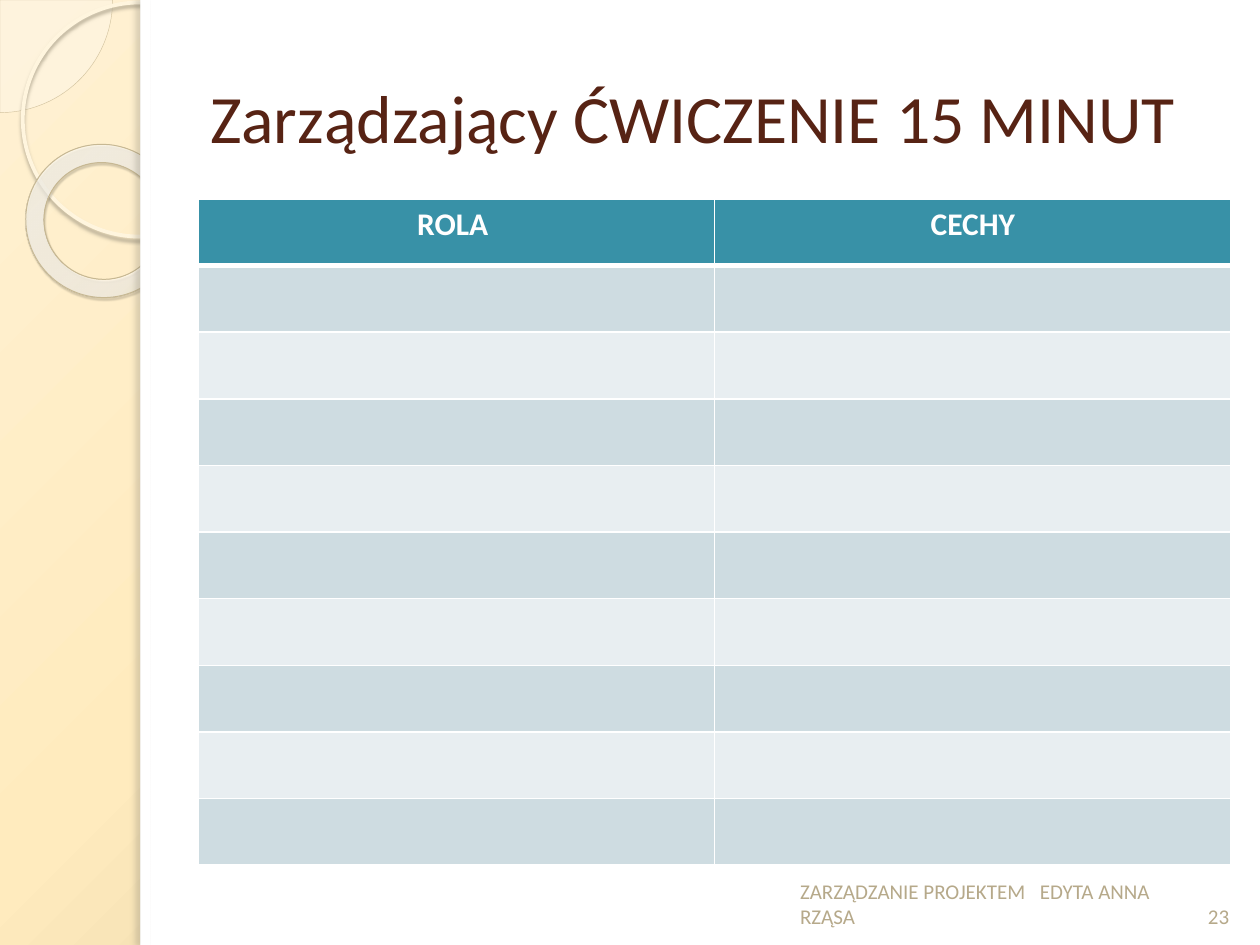
"""Build the role and trait exercise slide with its decorated side strip."""
from lxml import etree
from pptx import Presentation
from pptx.dml.color import RGBColor
from pptx.enum.shapes import MSO_SHAPE
from pptx.enum.text import MSO_ANCHOR, PP_ALIGN
from pptx.oxml.ns import qn
from pptx.util import Cm, Pt

PIE, OVAL, DONUT, RECT = MSO_SHAPE.PIE, MSO_SHAPE.OVAL, MSO_SHAPE.DONUT, MSO_SHAPE.RECTANGLE
LEFT, CENTER = PP_ALIGN.LEFT, PP_ALIGN.CENTER
TOP, MIDDLE, BOTTOM = MSO_ANCHOR.TOP, MSO_ANCHOR.MIDDLE, MSO_ANCHOR.BOTTOM

FONT = "Calibri"
WIDE, HIGH = 25.4, 19.05
COLORS = {
    "white": "FFFFFF", "title": "572314", "foot": "B6A98A",
    "head": "3891A7", "odd": "CEDCE1", "even": "E8EEF1",
    "pie": "FEFAF4", "pie_edge": "D3C39F", "ring": "FFF5DE", "donut": "C7B893",
    "ring_dim": "B0A68F", "donut_dim": "5A5444", "edge_dim": "736F63",
    "bg_in": "FFF1D3", "bg_mid": "FFEBBE", "bg_out": "C9B484",
    "in": "FFFCF6", "mid": "FFFEFB", "out": "F0D28E",
}
BACK = ([(0, "bg_in", 100), (40, "bg_mid", 100), (100, "bg_out", 100)], (-24, -20, 124, 120))
GLOW = ([(0, "in", 70), (70, "mid", 55), (100, "out", 60)], (-408, -50, 508, 150))
SHAPES = [
    dict(kind=PIE, box=(-2.27, -2.27, 4.54, 4.54), adj=(0, 54.02), fill="pie", alpha=33,
         line=("pie_edge", 0.25)),
    dict(kind=OVAL, box=(0.46, 0.05, 4.72, 4.72), line=("ring", 2.15),
         shadow=("ring_dim", 85, 2, 2, 90)),
    dict(kind=DONUT, box=(0.51, 2.92, 3.12, 3.07), adj=(0.12,), turn=38.6, grad=GLOW,
         line=("donut", 0.58), shadow=("donut_dim", 35, 1, 1.2, 75)),
    dict(kind=RECT, box=(2.83, 0, WIDE - 2.83, HIGH), fill="white"),
    dict(kind=RECT, box=(2.83, 0, 0.2, HIGH), fill="white", shadow=("edge_dim", 25, 3, 3, 180)),
]
TEXTS = [
    ((3.99, 0.76, 20.83, 3.18), MIDDLE, LEFT, 38.7, "title",
     [("Zarządzający ĆWICZENIE 15 MINUT", 0)]),
    ((15.88, 17.53, 8.05, 1.32), BOTTOM, LEFT, 12, "foot",
     [("ZARZĄDZANIE PROJEKTEM", 0), (" ", 5.4), ("EDYTA ANNA RZĄSA", 0)]),
    ((23.93, 17.53, 1.27, 1.32), BOTTOM, CENTER, 12, "foot", [("23", 0)]),
]
HEADS = ["ROLA ", "CECHY"]
GRID = (3.99, 4.01, 20.83, 13.44)
ROWS = 10


def rgb(name):
    return RGBColor.from_string(COLORS[name])


def node(up, tag, **attrs):
    item = etree.SubElement(up, qn(tag))
    for key, value in attrs.items():
        item.set(key, str(value))
    return item


def tint(up, name, alpha):
    color = node(up, "a:srgbClr", val=COLORS[name])
    if alpha < 100:
        node(color, "a:alpha", val=alpha * 1000)


def blend(up, stops, rect):
    old = up.find(qn("a:solidFill"))
    grad = etree.Element(qn("a:gradFill"), rotWithShape="1")
    row = node(grad, "a:gsLst")
    for pos, name, alpha in stops:
        tint(node(row, "a:gs", pos=pos * 1000), name, alpha)
    way = node(grad, "a:path", path="circle")
    node(way, "a:fillToRect", **{k: v * 1000 for k, v in zip("ltrb", rect)})
    up.replace(old, grad)


def draw(slide, kind, box, adj=(), turn=0, fill=None, alpha=100, grad=None,
         line=None, shadow=None):
    shape = slide.shapes.add_shape(kind, *map(Cm, box))
    for i, value in enumerate(adj):
        shape.adjustments[i] = value
    shape.rotation = turn
    props = shape._element.spPr
    if fill or grad:
        shape.fill.solid()
        shape.fill.fore_color.rgb = rgb(fill or "white")
    else:
        shape.fill.background()
    if grad:
        blend(props, *grad)
    elif alpha < 100:
        node(props.find(qn("a:solidFill"))[0], "a:alpha", val=alpha * 1000)
    if line:
        shape.line.color.rgb = rgb(line[0])
        shape.line.width = Pt(line[1])
    else:
        shape.line.fill.background()
    shape.shadow.inherit = False
    if shadow:
        name, dim, blur, dist, angle = shadow
        cast = node(props.find(qn("a:effectLst")), "a:outerShdw", blurRad=Pt(blur),
                    dist=Pt(dist), dir=angle * 60000, algn="tl", rotWithShape=0)
        tint(cast, name, dim)


def write(frame, runs, size, color, align, bold=False):
    para = frame.paragraphs[0]
    para.alignment = align
    for text, gap in runs:
        run = para.add_run()
        run.text = text
        font = run.font
        font.name, font.size, font.bold = FONT, Pt(size), bold
        font.color.rgb = rgb(color)
        if gap:
            run._r.get_or_add_rPr().set("spc", str(int(gap * 100)))


def label(slide, box, anchor, align, size, color, runs):
    frame = slide.shapes.add_textbox(*map(Cm, box)).text_frame
    frame.word_wrap = True
    frame.vertical_anchor = anchor
    write(frame, runs, size, color, align)


def border(cell, row):
    props = cell._tc.get_or_add_tcPr()
    thick = {"T": 3 if row == 1 else 1, "B": 3 if row == 0 else 1}
    for side in "LRTB":
        edge = node(props, f"a:ln{side}", w=Pt(thick.get(side, 1)))
        tint(node(edge, "a:solidFill"), "white", 100)


def grid(slide):
    table = slide.shapes.add_table(ROWS, len(HEADS), *map(Cm, GRID)).table
    for col in table.columns:
        col.width = Cm(GRID[2] / len(HEADS))
    for r, row in enumerate(table.rows):
        row.height = Cm(GRID[3] / ROWS)
        shade = "head" if r == 0 else "odd" if r % 2 else "even"
        for cell in row.cells:
            border(cell, r)
            cell.fill.solid()
            cell.fill.fore_color.rgb = rgb(shade)
            cell.vertical_anchor = TOP
    for c, head in enumerate(HEADS):
        write(table.cell(0, c).text_frame, [(head, 0)], 18, "white", CENTER, True)


def main():
    deck = Presentation()
    deck.slide_width, deck.slide_height = Cm(WIDE), Cm(HIGH)
    slide = deck.slides.add_slide(deck.slide_layouts[6])
    slide.background.fill.solid()
    blend(slide._element.find(".//" + qn("p:bgPr")), *BACK)
    for item in SHAPES:
        draw(slide, **item)
    grid(slide)
    for item in TEXTS:
        label(slide, *item)
    deck.save("out.pptx")


if __name__ == "__main__":
    main()
